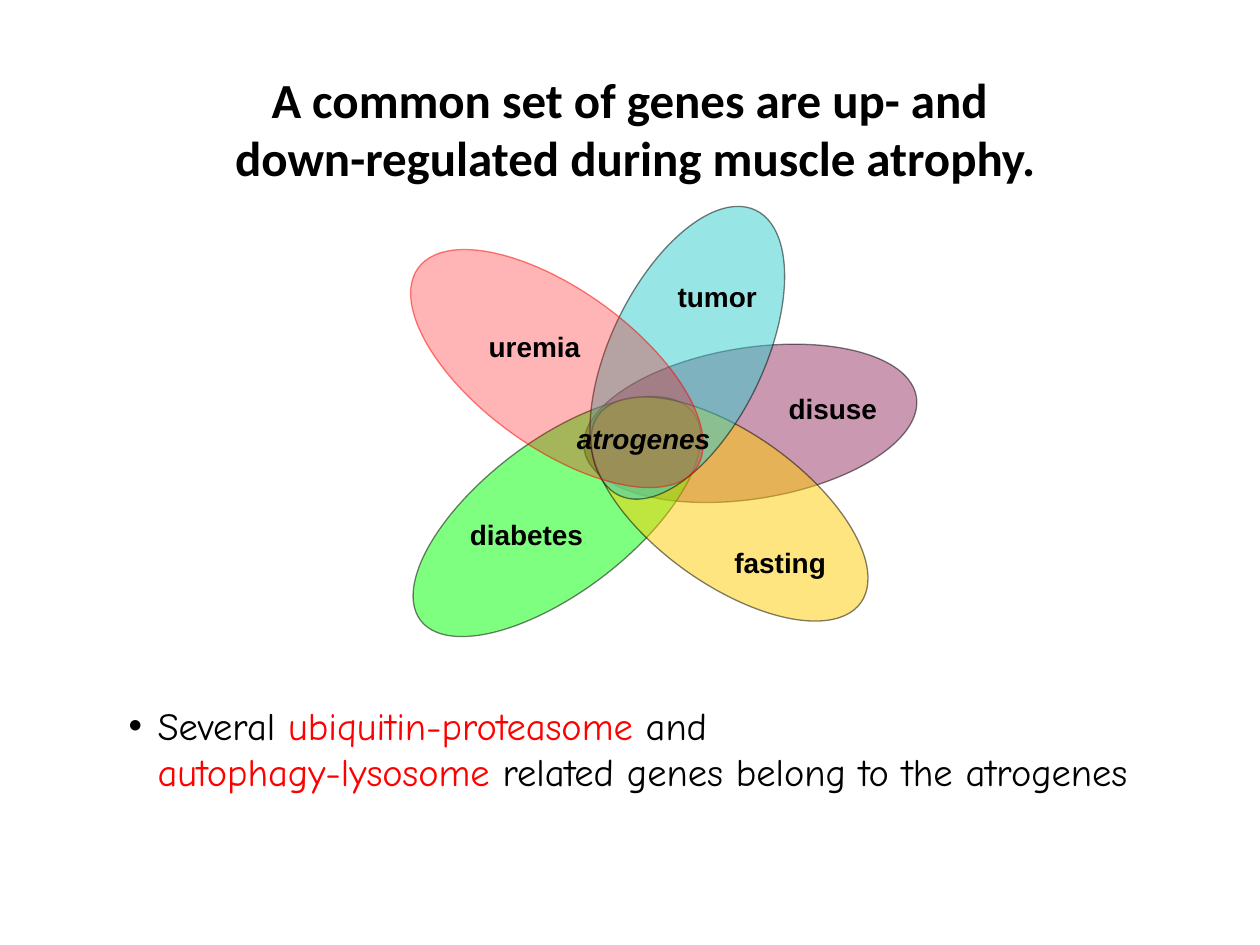
from lxml.etree import SubElement
from pptx import Presentation
from pptx.dml.color import RGBColor
from pptx.enum.shapes import MSO_SHAPE
from pptx.enum.text import MSO_ANCHOR, MSO_AUTO_SIZE, PP_ALIGN
from pptx.oxml.ns import qn
from pptx.util import Inches, Pt

HUES = {
    "text": "000000",
    "accent": "FF0000",
    "disuse": "993366",
    "diabetes": "00FF00",
    "fasting": "FFCC00",
    "tumor": "33CCCC",
    "uremia": "FF0000",
}

PETALS = [
    ("disuse", 1.62, 1.26, 2.67, 1.2, 351, 50, "text"),
    ("diabetes", 0.06, 2, 2.72, 1.2, 322.7, 50, "text"),
    ("fasting", 1.51, 1.94, 2.56, 1.2, 35.5, 50, "text"),
    ("tumor", 1.2, 0.69, 2.51, 1.22, 295.6, 50, "text"),
    ("uremia", 0.06, 0.8, 2.72, 1.25, 35.9, 29, "accent"),
]

LABELS = [
    ("atrogenes", 1.48, 1.8, 1.26, 0.37, True),
    ("disuse", 3.16, 1.56, 0.99, 0.4, False),
    ("fasting", 2.73, 2.78, 1.02, 0.4, False),
    ("diabetes", 0.63, 2.56, 1.22, 0.4, False),
    ("tumor", 2.28, 0.67, 0.91, 0.4, False),
    ("uremia", 0.78, 1.07, 1.02, 0.4, False),
]


def color(key):
    return RGBColor.from_string(HUES[key])


def add_run(para, text, face, size, key="text", bold=False, slant=False):
    run = para.add_run()
    run.text = text
    font = run.font
    font.name, font.size = face, Pt(size)
    font.bold, font.italic = bold, slant
    font.color.rgb = color(key)


def place(shape, left, top, width, height):
    shape.left, shape.top = Inches(left), Inches(top)
    shape.width, shape.height = Inches(width), Inches(height)


def set_bullet(para, char, indent):
    props = para._p.get_or_add_pPr()
    props.set("marL", str(Inches(1)))
    props.set("indent", str(Inches(indent)))
    if char:
        SubElement(props, qn("a:buFont"), typeface="Arial")
        SubElement(props, qn("a:buChar"), char=char)
    else:
        SubElement(props, qn("a:buNone"))


def fill_lines(shape, lines):
    frame = shape.text_frame
    frame.word_wrap = True
    frame.auto_size = MSO_AUTO_SIZE.NONE
    for i, line in enumerate(lines):
        para = frame.paragraphs[0] if i == 0 else frame.add_paragraph()
        yield para, line
        para.space_before = Pt(0)


def add_title(shape, box):
    place(shape, *box)
    shape.text_frame.vertical_anchor = MSO_ANCHOR.MIDDLE
    lines = [
        "A common set of genes are up- and ",
        "down-regulated during muscle atrophy.",
    ]
    for para, text in fill_lines(shape, lines):
        para.alignment = PP_ALIGN.CENTER
        add_run(para, text, "Calibri", 28, bold=True)


def add_body(shape, box):
    place(shape, *box)
    shape.text_frame.vertical_anchor = MSO_ANCHOR.TOP
    lines = [
        ("•", -0.23, [("Several ", "text"), ("ubiquitin-proteasome", "accent"),
                      (" and", "text")]),
        (None, 0, [("autophagy-lysosome ", "accent"),
                   ("related genes belong to the atrogenes", "text")]),
    ]
    for para, (char, indent, parts) in fill_lines(shape, lines):
        para.level = 2
        set_bullet(para, char, indent)
        for text, key in parts:
            add_run(para, text, "Comic Neue", 22, key)


def set_alpha(fill, percent):
    SubElement(fill.find(qn("a:srgbClr")), qn("a:alpha"), val=str(percent * 1000))


def add_venn(slide, left, top):
    group = slide.shapes.add_group_shape().shapes
    for name, x, y, width, height, angle, alpha, edge in PETALS:
        box = [Inches(n) for n in (left + x, top + y, width, height)]
        petal = group.add_shape(MSO_SHAPE.OVAL, *box)
        petal.rotation = angle
        petal.shadow.inherit = False
        petal.fill.solid()
        petal.fill.fore_color.rgb = color(name)
        petal.line.color.rgb = color(edge)
        petal.line.width = Pt(0.75)
        props = petal.element.spPr
        set_alpha(props.find(qn("a:solidFill")), alpha)
        set_alpha(props.find(qn("a:ln")).find(qn("a:solidFill")), 49)
    for text, x, y, width, height, slant in LABELS:
        box = [Inches(n) for n in (left + x, top + y, width, height)]
        frame = group.add_textbox(*box).text_frame
        frame.word_wrap = False
        add_run(frame.paragraphs[0], text, "Arial", 16, bold=True, slant=slant)


def main():
    deck = Presentation()
    deck.slide_width, deck.slide_height = Inches(10), Inches(7.5)
    slide = deck.slides.add_slide(deck.slide_layouts[1])
    add_title(slide.shapes.title, (0.28, 0.5, 9.52, 1.03))
    add_body(slide.placeholders[1], (0.15, 5.52, 9.56, 0.83))
    add_venn(slide, 3, 1.5)
    deck.save("out.pptx")


if __name__ == "__main__":
    main()
